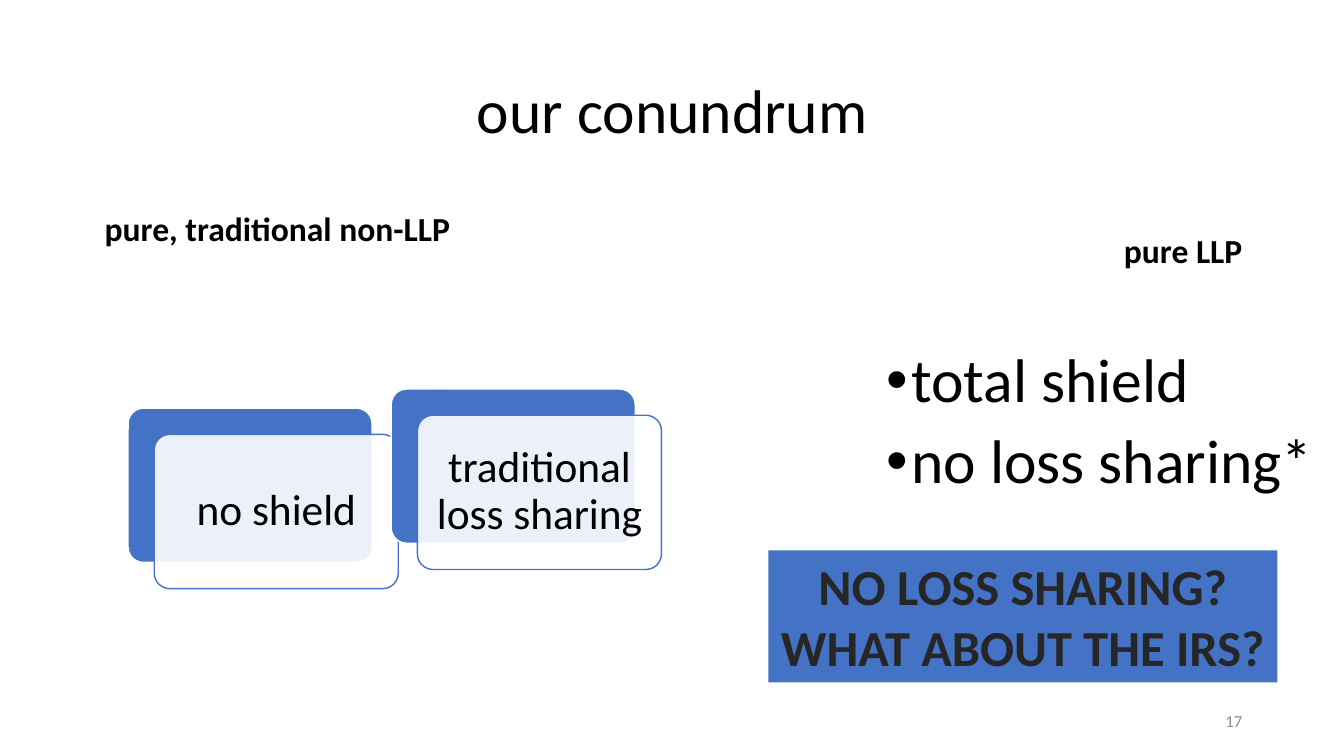
import pptx
import pptx.util
import pptx.dml.color
import pptx.enum.shapes
import pptx.enum.text
import pptx.oxml
import pptx.oxml.ns
import lxml.etree

Inches = pptx.util.Inches
Pt = pptx.util.Pt
Color = pptx.dml.color.RGBColor
Align = pptx.enum.text.PP_ALIGN
Anchor = pptx.enum.text.MSO_ANCHOR
Shape = pptx.enum.shapes.MSO_SHAPE
qn = pptx.oxml.ns.qn

BLUE = Color(0x44, 0x72, 0xC4)
WHITE = Color(0xFF, 0xFF, 0xFF)
BLACK = Color(0, 0, 0)
DARK = Color(0x26, 0x26, 0x26)
GREY = Color(0x8C, 0x8C, 0x8C)


def write(frame, lines, size, color=BLACK, bold=False, align=Align.LEFT,
          anchor=Anchor.TOP, wrap=True, spacing=0.9):
    frame.text = "\n".join(lines)
    frame.word_wrap = wrap
    frame.vertical_anchor = anchor
    for para in frame.paragraphs:
        para.alignment = align
        para.line_spacing = spacing
        for run in para.runs:
            run.font.name = "Calibri"
            run.font.size = Pt(size)
            run.font.bold = bold
            run.font.color.rgb = color


def add_label(slide, box, text, size, **style):
    label = slide.shapes.add_textbox(*map(Inches, box))
    write(label.text_frame, [text], size, **style)
    return label


def add_panel(slide, box, kind, fill, line=None):
    panel = slide.shapes.add_shape(kind, *map(Inches, box))
    panel.shadow.inherit = False
    panel.fill.solid()
    panel.fill.fore_color.rgb = fill
    if line is None:
        panel.line.fill.background()
    else:
        panel.line.color.rgb = line
        panel.line.width = Pt(1)
    return panel


def add_card(slide, box, text):
    left, top, width, height = box
    shift, inset = 0.26, 0.05
    back = add_panel(slide, box, Shape.ROUNDED_RECTANGLE, BLUE, WHITE)
    front = add_panel(slide, (left + shift, top + shift, width, height),
                      Shape.ROUNDED_RECTANGLE, WHITE, BLUE)
    for panel in (back, front):
        panel.adjustments[0] = 0.1
    tint = front.fill._xPr.find(qn("a:solidFill"))[0]
    lxml.etree.SubElement(tint, qn("a:alpha"), val="90000")
    label = add_label(slide, (left + shift + inset, top + shift + inset,
                              width - 2 * inset, height - 2 * inset),
                      text, 31, align=Align.CENTER, anchor=Anchor.MIDDLE)
    frame = label.text_frame
    frame.margin_left = frame.margin_right = Inches(0.13)
    frame.margin_top = frame.margin_bottom = Inches(0.13)


def add_points(slide, box, points):
    area = slide.shapes.add_textbox(*map(Inches, box))
    write(area.text_frame, points, 44)
    for index, para in enumerate(area.text_frame.paragraphs):
        para.space_before = Pt(10 if index else 0)
        props = para._p.get_or_add_pPr()
        props.set("marL", str(Inches(0.25)))
        props.set("indent", str(-Inches(0.25)))
        lxml.etree.SubElement(props, qn("a:buFont"), typeface="Arial")
        lxml.etree.SubElement(props, qn("a:buChar"), char="•")


def add_banner(slide, box, lines):
    banner = add_panel(slide, box, Shape.RECTANGLE, BLUE)
    write(banner.text_frame, lines, 36, color=DARK, bold=True,
          align=Align.CENTER, wrap=False, spacing=1.0)


def main():
    deck = pptx.Presentation()
    deck.slide_width, deck.slide_height = Inches(13.33), Inches(7.5)
    slide = deck.slides.add_slide(deck.slide_layouts[6])
    add_label(slide, (0.92, 0.4, 11.5, 1.45), "our conundrum", 44,
              align=Align.CENTER, anchor=Anchor.MIDDLE)
    add_label(slide, (0.94, 1.62, 5.64, 0.9), "pure, traditional non-LLP", 24,
              bold=True, anchor=Anchor.BOTTOM)
    add_card(slide, (1.27, 4.05, 2.42, 1.53), "no shield")
    add_card(slide, (3.88, 3.86, 2.42, 1.53), "traditional loss sharing")
    add_label(slide, (6.75, 1.84, 5.67, 0.9), "pure LLP", 24,
              bold=True, align=Align.RIGHT, anchor=Anchor.BOTTOM)
    add_points(slide, (8.69, 3.42, 5.67, 2.9),
               ["total shield", "no loss sharing*"])
    add_label(slide, (9.42, 6.95, 3, 0.4), "17", 12, color=GREY,
              align=Align.RIGHT, anchor=Anchor.MIDDLE, spacing=1.0)
    add_banner(slide, (7.62, 5.46, 5.05, 1.31),
               ["NO LOSS SHARING?", "WHAT ABOUT THE IRS?"])
    deck.save("out.pptx")


if __name__ == "__main__":
    main()
